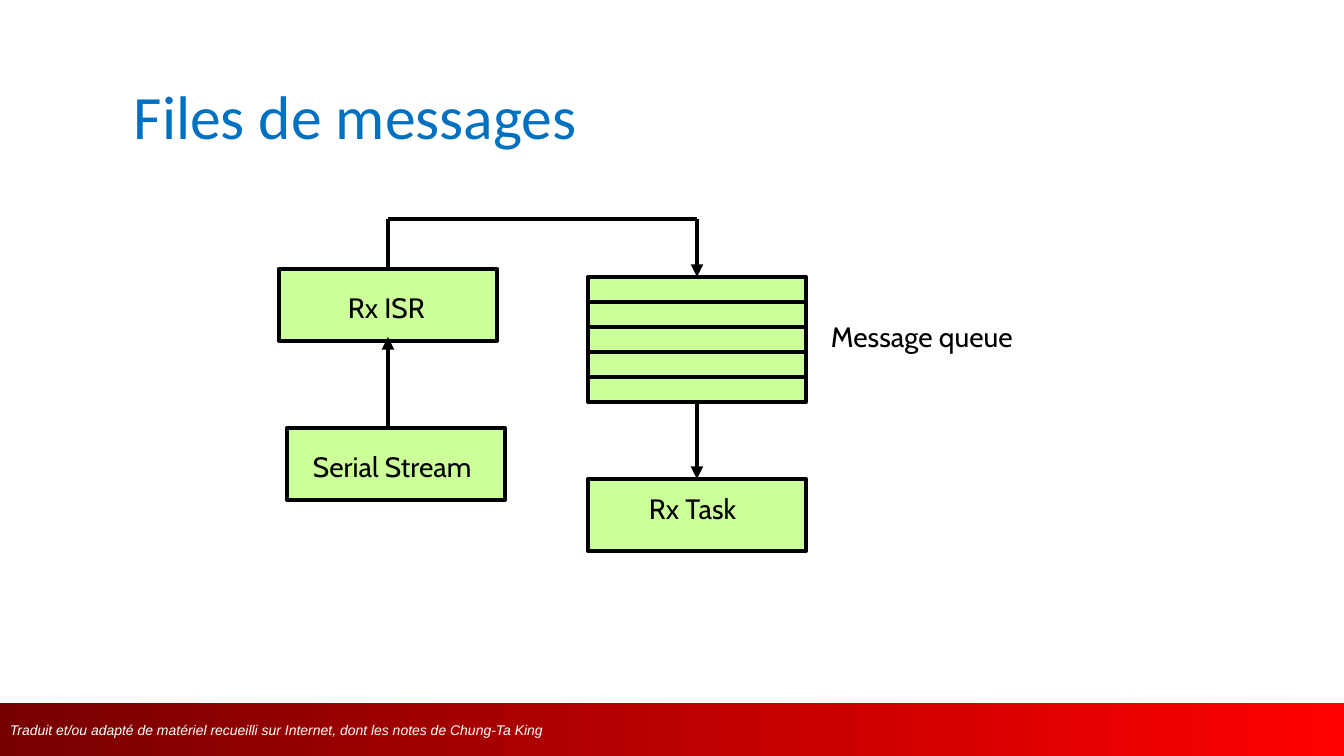
from lxml.etree import SubElement
from pptx import Presentation
from pptx.dml.color import RGBColor
from pptx.enum.shapes import MSO_CONNECTOR, MSO_SHAPE
from pptx.enum.text import MSO_ANCHOR, MSO_AUTO_SIZE, PP_ALIGN
from pptx.oxml.ns import qn
from pptx.util import Emu, Pt

PIXELS_PER_INCH = 100.8
BOX_WIDTH, BOX_HEIGHT = 218, 72
ROW_HEIGHT, ROW_COUNT = 25, 5
TOP, BOTTOM = 0, 2


def px(length):
    return Emu(round(length * 914400 / PIXELS_PER_INCH))


def color(value):
    return RGBColor.from_string(value)


def add_run(paragraph, text, size, font, font_color, italic=False):
    run = paragraph.add_run()
    run.text = text
    run.font.size = Pt(size)
    run.font.name = font
    run.font.italic = italic
    run.font.color.rgb = color(font_color)


def add_box(slide, left, top, height=BOX_HEIGHT):
    shape = slide.shapes.add_shape(
        MSO_SHAPE.RECTANGLE, px(left), px(top), px(BOX_WIDTH), px(height))
    shape.shadow.inherit = False
    shape.fill.solid()
    shape.fill.fore_color.rgb = color("CCFF99")
    shape.line.color.rgb = color("000000")
    shape.line.width = Pt(3)
    return shape


def add_label(slide, text, left, top, width):
    shape = slide.shapes.add_textbox(px(left), px(top), px(width), px(44))
    shape.text_frame.word_wrap = False
    shape.text_frame.auto_size = MSO_AUTO_SIZE.SHAPE_TO_FIT_TEXT
    add_run(shape.text_frame.paragraphs[0], text, 20, "Cabin", "000000")


def add_line(slide, start, end, arrow=False, begin=None, finish=None):
    connector = slide.shapes.add_connector(
        MSO_CONNECTOR.STRAIGHT, *map(px, start + end))
    connector.line.color.rgb = color("000000")
    connector.line.width = Pt(3)
    if arrow:
        SubElement(connector.line._get_or_add_ln(), qn("a:tailEnd"), type="triangle")
    SubElement(connector._element.spPr, qn("a:effectLst"))
    if begin:
        connector.begin_connect(*begin)
    if finish:
        connector.end_connect(*finish)


def add_title(slide, text):
    shape = slide.shapes.add_textbox(px(124), px(52), px(1008), px(106))
    frame = shape.text_frame
    frame.word_wrap = True
    frame.vertical_anchor = MSO_ANCHOR.BOTTOM
    paragraph = frame.paragraphs[0]
    paragraph.line_spacing = 0.9
    add_run(paragraph, text, 44, "Calibri", "0070C0")


def add_footer(slide, text):
    shape = slide.shapes.add_shape(
        MSO_SHAPE.RECTANGLE, 0, px(703), px(1344), px(53))
    shape.shadow.inherit = False
    shape.line.fill.background()
    shape.fill.gradient()
    shape.fill.gradient_angle = 0
    for stop, value, position in zip(shape.fill.gradient_stops, ("760000", "FF0000"), (0, 1)):
        stop.color.rgb = color(value)
        stop.position = position
    frame = shape.text_frame
    frame.word_wrap = True
    frame.vertical_anchor = MSO_ANCHOR.MIDDLE
    paragraph = frame.paragraphs[0]
    paragraph.alignment = PP_ALIGN.LEFT
    add_run(paragraph, text, 10, "Arial", "FFFFFF", italic=True)


def main():
    presentation = Presentation()
    presentation.slide_width, presentation.slide_height = px(1344), px(756)
    slide = presentation.slides.add_slide(presentation.slide_layouts[6])

    # Footer band and title
    add_footer(slide, "Traduit et/ou adapté de matériel recueilli sur Internet, "
                      "dont les notes de Chung-Ta King")
    add_title(slide, "Files de messages")

    # Boxes and message queue
    receiver = add_box(slide, 279, 269)
    add_box(slide, 287, 428)
    task = add_box(slide, 588, 479)
    queue = [add_box(slide, 588, 277 + row * ROW_HEIGHT, ROW_HEIGHT)
             for row in range(ROW_COUNT)]

    # Flow from the stream to the task
    add_line(slide, (388, 428), (388, 337), arrow=True)
    add_line(slide, (388, 269), (388, 219), begin=(receiver, TOP))
    add_line(slide, (388, 219), (697, 219))
    add_line(slide, (697, 219), (697, 277), arrow=True, finish=(queue[0], TOP))
    add_line(slide, (697, 402), (697, 479), arrow=True,
             begin=(queue[-1], BOTTOM), finish=(task, TOP))

    # Labels
    for label in (("Rx ISR", 338, 286, 105),
                  ("Serial Stream", 303, 445, 186),
                  ("Rx Task", 639, 487, 116),
                  ("Message queue", 821, 315, 213)):
        add_label(slide, *label)

    presentation.save("out.pptx")


if __name__ == "__main__":
    main()
